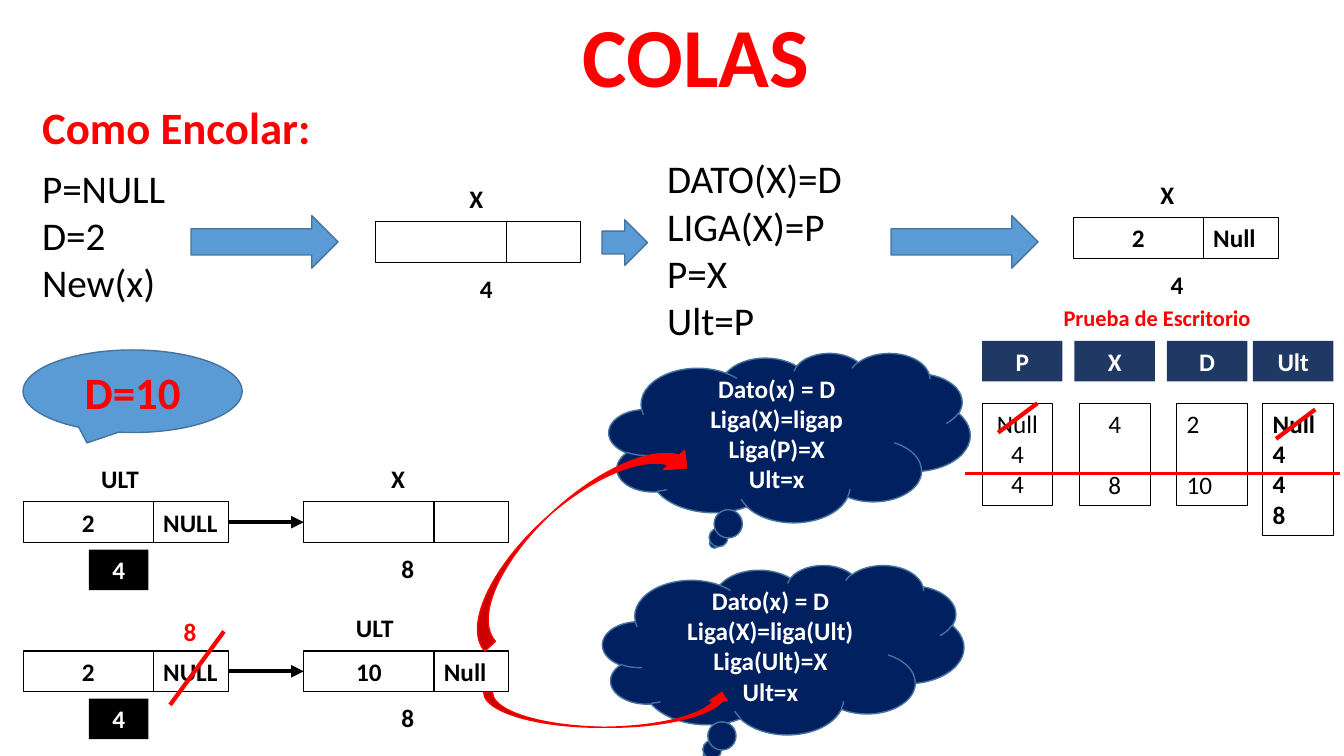
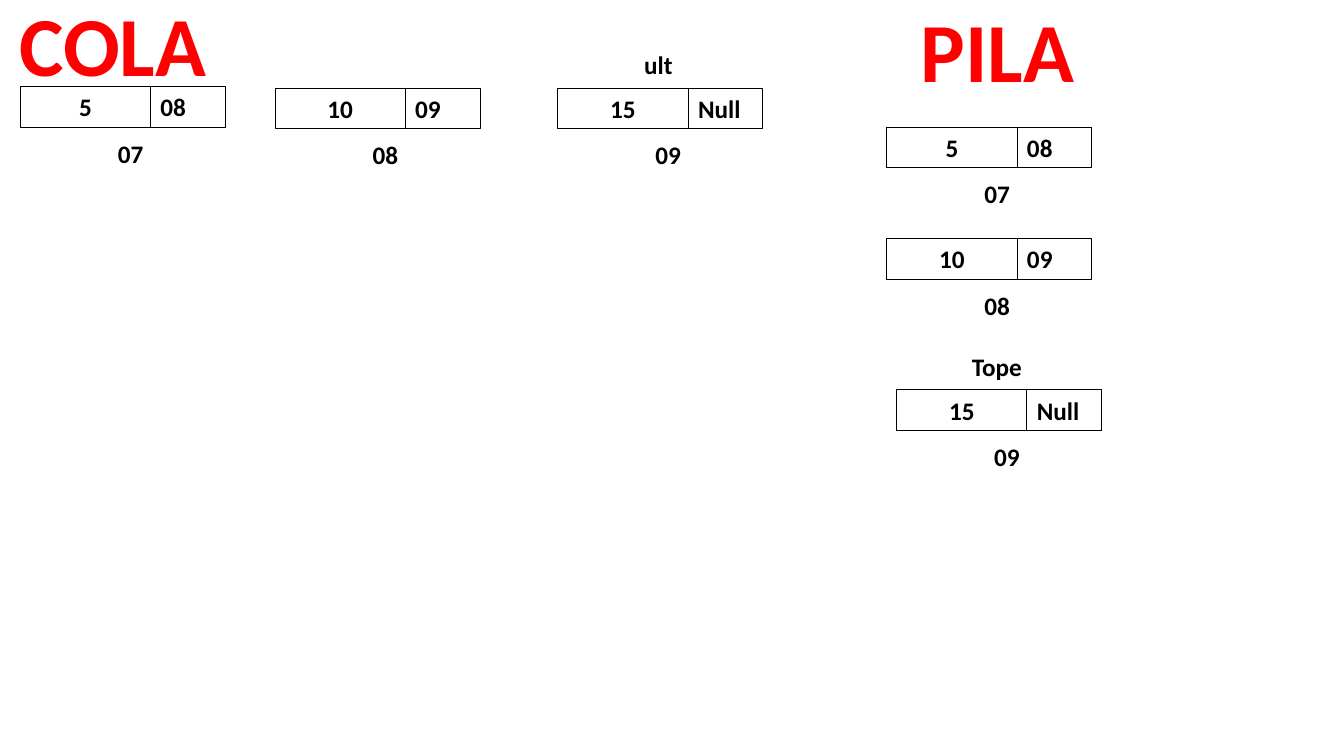
from pptx import Presentation
from pptx import util as u
from pptx.dml.color import RGBColor
from pptx.enum import shapes, text
from lxml import etree

Pt = u.Pt
Kind = shapes.MSO_SHAPE
Align = text.PP_ALIGN
Anchor = text.MSO_ANCHOR
FONT = "Calibri"
HUES = {
    "red": "FF0000", "black": "000000", "white": "FFFFFF", "blue": "5B9BD5",
    "edge": "43739E", "navy": "002060", "head": "203864",
}
NS = "http://schemas.openxmlformats.org/drawingml/2006/main"
CELL, LINK, ROW = 93, 53.5, 29    # width of value, width of link, height
TAG = 42.5                        # width of a short label


def hue(name):
    return RGBColor.from_string(HUES[name])


# Basic parts
def write(shape, lines, size=18, bold=True, color="black", align=Align.CENTER,
          anchor=Anchor.TOP, right=7.2, gap=0):
    """Fill a shape with paragraphs; gap is the space before the last one."""
    frame = shape.text_frame
    frame.word_wrap = True
    frame.auto_size = text.MSO_AUTO_SIZE.NONE
    frame.vertical_anchor = anchor
    frame.margin_left, frame.margin_right = Pt(7.2), Pt(right)
    frame.margin_top = frame.margin_bottom = Pt(3.6)
    lines = [lines] if isinstance(lines, str) else lines
    for i, line in enumerate(lines):
        para = frame.paragraphs[0] if i == 0 else frame.add_paragraph()
        para.alignment = align
        run = para.add_run()
        run.text = line
        font = run.font
        font.name, font.size, font.bold = FONT, Pt(size), bold
        font.color.rgb = hue(color)
    if gap:
        para.space_before = Pt(gap)
    return shape


def label(slide, x, y, w, h, lines, **style):
    box = slide.shapes.add_textbox(Pt(x), Pt(y), Pt(w), Pt(h))
    return write(box, lines, **style)


def block(slide, x, y, w, h, lines=(), kind=Kind.RECTANGLE, fill=None,
          edge="black", width=0.75, **style):
    shape = slide.shapes.add_shape(kind, Pt(x), Pt(y), Pt(w), Pt(h))
    shape.shadow.inherit = False
    if fill:
        shape.fill.solid()
        shape.fill.fore_color.rgb = hue(fill)
    else:
        shape.fill.background()
    if edge:
        shape.line.color.rgb = hue(edge)
        shape.line.width = Pt(width)
    else:
        shape.line.fill.background()
    if lines:
        write(shape, lines, **style)
    return shape


def line(slide, x1, y1, x2, y2, color="red", width=3):
    wire = slide.shapes.add_connector(
        shapes.MSO_CONNECTOR.STRAIGHT, Pt(x1), Pt(y1), Pt(x2), Pt(y2))
    wire.line.color.rgb = hue(color)
    wire.line.width = Pt(width)
    etree.SubElement(wire._element.spPr, f"{{{NS}}}effectLst")
    return wire


def join(slide, left, right):
    """Arrow from the right side of one box to the left side of another."""
    wire = line(slide, 0, 0, 0, 0, color="black")
    wire.begin_connect(left, 3)
    wire.end_connect(right, 1)
    etree.SubElement(wire.line._get_or_add_ln(), f"{{{NS}}}tailEnd", type="triangle")


def title(slide, x, y, words):
    shape = slide.shapes.title
    shape.left, shape.top, shape.width, shape.height = map(Pt, (x, y, 210, 80))
    write(shape, words, size=60, color="red")


def node(slide, x, y, value="", link="", addr="", top="", topx=50.5, topw=TAG,
         addrx=57.5, dark=False):
    """List node: value and link cells, name above, address below."""
    cell = block(slide, x, y, CELL, ROW, value)
    tail = block(slide, x + CELL, y, LINK, ROW, link, align=Align.LEFT, right=3.6)
    if top:
        label(slide, x + topx, y - 31, topw, ROW, top)
    if dark:
        block(slide, x + 47, y + 34, TAG, ROW, addr, fill="black", edge=None,
              color="white")
    else:
        label(slide, x + addrx, y + 33, TAG, ROW, addr)
    return cell, tail


# Regions of the first slide
def start(slide, x, y):
    """First insertion: code, arrows and nodes from left to right."""
    code = dict(size=28, bold=False, align=Align.LEFT)
    label(slide, x, y, 224, 46, "Como Encolar:", size=32, color="red",
          align=Align.LEFT)
    label(slide, x, y + 46, 189, 109, ["P=NULL", "D=2", "New(x)"], **code)
    label(slide, x + 446.5, y + 39.5, 189, 143,
          ["DATO(X)=D", "LIGA(X)=P", "P=X", "Ult=P"], **code)
    node(slide, x + 245.5, y + 91, addr="4", top="X")
    node(slide, x + 743.5, y + 88, "2", "Null", "4", top="X", topx=46, addrx=53)
    for dx, dy, w, h in ((113.5, 86.5, 105, 37.5), (407, 89.5, 32.5, 32.5),
                         (613.5, 86.5, 105, 37.5)):
        block(slide, x + dx, y + dy, w, h, kind=Kind.RIGHT_ARROW,
              fill="blue", edge="edge", width=1)


def chain(slide, x, y):
    """Second insertion: before and after linking the new node."""
    block(slide, x, y, 156.5, 59, "D=10", kind=Kind.OVAL_CALLOUT, fill="blue",
          edge="edge", width=1, size=32, color="red", anchor=Anchor.MIDDLE)
    for dy, last, top, name, side in (
            (108.5, ("", ""), "X", "ULT", 46), (215, ("10", "Null"), "ULT", "", 29.5)):
        old = node(slide, x, y + dy, "2", "NULL", "4", top=name, topx=48, dark=True)
        new = node(slide, x + 200.5, y + dy, *last, "8", top=top, topx=side,
                   addrx=53)
        join(slide, old[1], new[0])
    label(slide, x + 98, y + 187, TAG, ROW, "8", color="red")
    line(slide, x + 143.5, y + 201, x + 105, y + 253.5)


def clouds(slide, x, y):
    """Thought clouds with the steps, and the arrows that lead to them."""
    for dx, dy, steps in ((4.5, 0, ["Liga(X)=ligap", "Liga(P)=X"]),
                          (0, 151.5, ["Liga(X)=liga(Ult)", "Liga(Ult)=X"])):
        block(slide, x + dx, y + dy, 258, 121, ["Dato(x) = D", *steps, "Ult=x"],
              kind=Kind.CLOUD_CALLOUT, fill="navy", edge="edge", width=1,
              color="white", anchor=Anchor.MIDDLE)
    for dx, dy, w, h, kind, turn in (
            (-124.5, 108.5, 205, 41, Kind.CURVED_DOWN_ARROW, 317.8),
            (-85, 242.5, 176.5, 25, Kind.CURVED_UP_ARROW, 0)):
        curve = block(slide, x + dx, y + dy, w, h, kind=kind, fill="red",
                      edge="red", width=1)
        curve.rotation = turn


def trace(slide, x, y):
    """Desk check: a heading and a column of values for each variable."""
    left = dict(align=Align.LEFT)
    label(slide, x + 40, y, 170, 27, "Prueba de Escritorio", size=16, color="red")
    for name, hx, cx, high, values, style in (
            ("P", 0, 0, 73, ["Null", "4", "4"], dict(bold=False)),
            ("X", 66, 69.5, 73, ["4", "8"], dict(bold=False, gap=22)),
            ("D", 132, 139, 73, ["2", "10"], dict(bold=False, gap=22, **left)),
            ("Ult", 193.5, 200.5, 94.5, ["Null", "4", "4", "8"], left)):
        block(slide, x + hx, y + 29.5, 57.5, ROW, name, fill="head", edge=None,
              color="white")
        block(slide, x + cx, y + 74, 50.5, high, values, **style)
    line(slide, x - 12.5, y + 124.5, x + 255.5, y + 124.5, width=2.25)
    for dx, dy in ((11.5, 74), (210, 78.5)):
        line(slide, x + dx + 28, y + dy, x + dx, y + dy + 21)


# Regions of the second slide
def queue(slide, x, y):
    title(slide, x - 39, y - 71, "COLA")
    node(slide, x, y, "5", "08", "07")
    node(slide, x + 182, y + 1, "10", "09", "08")
    node(slide, x + 384, y + 1, "15", "Null", "09", top="ult")


def stack(slide, x, y):
    label(slide, x - 26, y - 95.5, 210, 80, "PILA", size=60, color="red")
    node(slide, x, y, "5", "08", "07")
    node(slide, x, y + 79.5, "10", "09", "08")
    node(slide, x + 7, y + 187.5, "15", "Null", "09", top="Tope", topx=39, topw=65)


def main():
    deck = Presentation()
    deck.slide_width, deck.slide_height = Pt(960), Pt(540)
    plain = deck.slide_layouts[5]

    first = deck.slides.add_slide(plain)
    title(first, 392, -1, "COLAS")
    start(first, 23, 67.5)
    chain(first, 16.5, 250)
    clouds(first, 430.5, 252)
    trace(first, 701.5, 214)

    second = deck.slides.add_slide(plain)
    queue(second, 14.5, 62)
    stack(second, 633.5, 91)

    deck.save("out.pptx")


if __name__ == "__main__":
    main()
